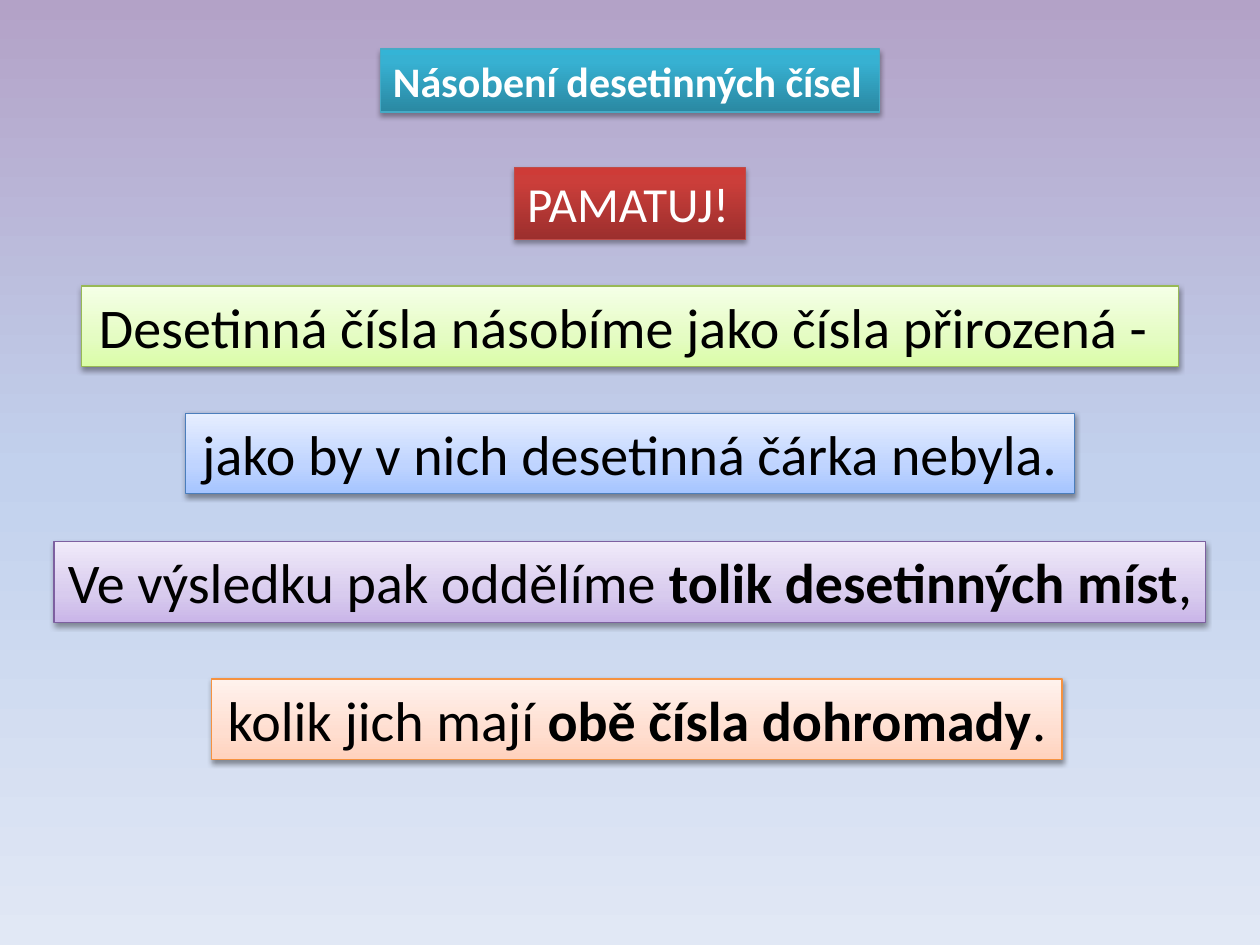
from lxml import etree
from pptx import Presentation
from pptx import util as u
from pptx.dml.color import RGBColor
from pptx.enum import shapes, text
from pptx.oxml import ns

WHITE, BLACK = "FFFFFF", "000000"
COLUMNS, ROWS = 100, 75


def color(code):
    return RGBColor.from_string(code)


def add_node(parent, tag, **attributes):
    values = {name: str(value) for name, value in attributes.items()}
    return etree.SubElement(parent, ns.qn(tag), values)


class Deck:
    """Style of the rule boxes and the slide they are placed on."""

    font = "Calibri"
    line_width = u.Pt(0.75)

    def __init__(self):
        self.presentation = Presentation()
        self.presentation.slide_width = u.Inches(10)
        self.presentation.slide_height = u.Inches(7.5)
        self.column = self.presentation.slide_width / COLUMNS
        self.row = self.presentation.slide_height / ROWS
        self.slide = self.presentation.slides.add_slide(
            self.presentation.slide_layouts[6])

    def gradient(self, fill, owner, stops, angle):
        """Fill with any number of (percent, color) stops."""
        fill.gradient()
        fill.gradient_angle = angle
        stop_list = owner.find(".//" + ns.qn("a:gsLst"))
        for stop in list(stop_list):
            stop_list.remove(stop)
        for percent, code in stops:
            stop = add_node(stop_list, "a:gs", pos=percent * 1000)
            add_node(stop, "a:srgbClr", val=code)

    def background(self, stops):
        self.gradient(self.slide.background.fill, self.slide.element, stops, 270)

    def shadow(self, shape, distance, opacity):
        shape.shadow.inherit = False
        effects = shape.element.find(".//" + ns.qn("a:effectLst"))
        outer = add_node(effects, "a:outerShdw", blurRad=u.Pt(3.1),
                         dist=u.Pt(distance), dir=90 * 60000, rotWithShape=0)
        shade = add_node(outer, "a:srgbClr", val=BLACK)
        add_node(shade, "a:alpha", val=opacity * 1000)

    def box(self, top, width, height, colors, line, runs, size, *,
            strong=False, center=COLUMNS / 2, wrap=False):
        """Text box centred on a column; strong boxes are dark with white text."""
        shape = self.slide.shapes.add_shape(
            shapes.MSO_SHAPE.RECTANGLE,
            round((center - width / 2) * self.column), round(top * self.row),
            round(width * self.column), round(height * self.row))
        positions = (0, 80, 100) if strong else (0, 35, 100)
        self.gradient(shape.fill, shape.element, zip(positions, colors), 90)
        shape.line.color.rgb = color(line)
        shape.line.width = self.line_width
        self.shadow(shape, *((1.8, 35) if strong else (1.6, 38)))

        frame = shape.text_frame
        frame.word_wrap = wrap
        frame.auto_size = text.MSO_AUTO_SIZE.SHAPE_TO_FIT_TEXT
        frame.vertical_anchor = text.MSO_ANCHOR.TOP
        paragraph = frame.paragraphs[0]
        paragraph.alignment = text.PP_ALIGN.LEFT if strong else text.PP_ALIGN.CENTER
        for words, bold in runs:
            run = paragraph.add_run()
            run.text = words
            run.font.name = self.font
            run.font.size = u.Pt(size)
            run.font.bold = bold
            run.font.color.rgb = color(WHITE if strong else BLACK)


def main():
    deck = Deck()
    deck.background([(0, "B3A2C7"), (50, "C2D1ED"), (100, "E1E8F5")])

    # Title and call to remember
    deck.box(3.9, 39.6, 5, ("2A88A2", "37B1D2", "34B4D6"), "46AAC5",
             [("Násobení desetinných čísel", True)], 24, strong=True)
    deck.box(13.3, 18.3, 5.7, ("9C2F2D", "CB3E3A", "CE3B37"), "BF4C48",
             [("PAMATUJ!", False)], 28, strong=True)

    # First rule: multiply as natural numbers
    deck.box(22.7, 87.1, 6.4, ("DAFDA7", "E4FCC2", "F5FFE7"), "98B955",
             [("Desetinná čísla násobíme jako čísla přirozená - ", False)], 32)
    deck.box(32.8, 70.6, 6.4, ("A4C4FF", "BFD4FF", "E6EEFF"), "4B7EBC",
             [("jako by v nich desetinná čárka nebyla.", False)], 32)

    # Second rule: place the decimal point
    deck.box(43, 91.4, 6.4, ("C9B5E8", "D8CBEE", "F0EAF9"), "7D60A0",
             [("Ve výsledku pak oddělíme ", False),
              ("tolik desetinných míst", True), (",", False)], 32, wrap=True)
    deck.box(53.9, 67.5, 6.4, ("FFD2BD", "FFDED0", "FFF2ED"), "F69240",
             [("kolik jich mají ", False),
              ("obě čísla dohromady", True), (".", False)], 32, center=50.55)

    deck.presentation.save("out.pptx")


if __name__ == "__main__":
    main()
